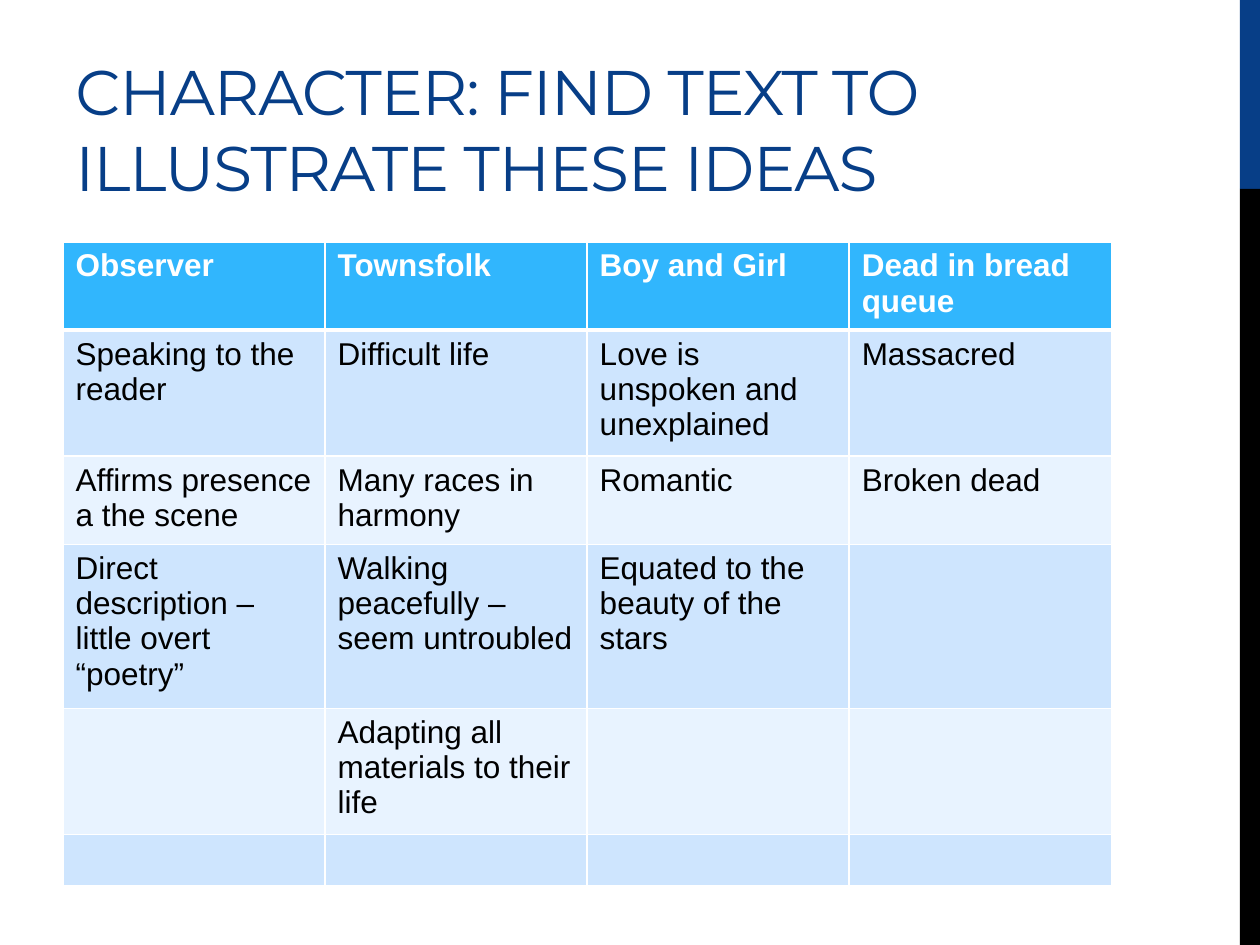
from lxml import etree
from pptx import Presentation
from pptx.dml.color import RGBColor
from pptx.enum import shapes, text
from pptx.oxml import ns
from pptx.util import Inches, Pt

TITLE = "CHARACTER: FIND TEXT TO ILLUSTRATE THESE IDEAS"
ROWS = [
    ("Observer", "Townsfolk", "Boy and Girl", "Dead in bread queue"),
    ("Speaking to the reader", "Difficult life",
     "Love is unspoken and unexplained", "Massacred"),
    ("Affirms presence a the scene", "Many races in harmony",
     "Romantic", "Broken dead"),
    ("Direct description – little overt “poetry”",
     "Walking peacefully – seem untroubled",
     "Equated to the beauty of the stars", ""),
    ("", "Adapting all materials to their life", "", ""),
    ("", "", "", ""),
]
ROW_HEIGHTS = [0.65, 0.94, 0.66, 1.22, 0.94, 0.41]
COLUMN_WIDTH = 2.08
COLORS = {
    "navy": "073E87", "black": "000000", "white": "FFFFFF",
    "header": "31B6FD", "odd": "CEE5FE", "even": "E8F3FF",
}
# Side bars: top, height, colour
BARS = [(0, 1.5, "navy"), (1.5, 6, "black")]


def rgb(name):
    return RGBColor.from_string(COLORS[name])


def style_span(span, font_name, size, color, bold=False):
    span.font.name = font_name
    span.font.size = Pt(size)
    span.font.bold = bold
    span.font.color.rgb = rgb(color)


def set_borders(cell, widths):
    properties = cell._tc.get_or_add_tcPr()
    for position, (side, width) in enumerate(widths.items()):
        line = etree.Element(ns.qn(f"a:ln{side}"), w=str(Pt(width)))
        fill = etree.SubElement(line, ns.qn("a:solidFill"))
        etree.SubElement(fill, ns.qn("a:srgbClr"), val=COLORS["white"])
        properties.insert(position, line)


def add_bars(page):
    for top, height, color in BARS:
        bar = page.shapes.add_shape(
            shapes.MSO_SHAPE.RECTANGLE,
            Inches(9.84), Inches(top), Inches(0.16), Inches(height))
        bar.shadow.inherit = False
        bar.fill.solid()
        bar.fill.fore_color.rgb = rgb(color)
        bar.line.fill.background()


def add_title(page):
    box = page.shapes.add_textbox(
        Inches(0.5), Inches(0.17), Inches(8.92), Inches(1.5))
    frame = box.text_frame
    frame.word_wrap = True
    frame.vertical_anchor = text.MSO_ANCHOR.BOTTOM
    frame.text = TITLE
    span = frame.paragraphs[0].runs[0]
    style_span(span, "Montserrat", 36, "navy")
    span.font._element.set("spc", "-60")


def add_character_table(page):
    columns = len(ROWS[0])
    table = page.shapes.add_table(
        len(ROWS), columns, Inches(0.5), Inches(1.92),
        Inches(COLUMN_WIDTH * columns), Inches(sum(ROW_HEIGHTS))).table
    for column in table.columns:
        column.width = Inches(COLUMN_WIDTH)
    for index, (words, height) in enumerate(zip(ROWS, ROW_HEIGHTS)):
        table.rows[index].height = Inches(height)
        header = index == 0
        shade = "header" if header else "odd" if index % 2 else "even"
        widths = {"L": 1, "R": 1, "T": 3 if index == 1 else 1,
                  "B": 3 if header else 1}
        for cell, wording in zip(table.rows[index].cells, words):
            cell.fill.solid()
            cell.fill.fore_color.rgb = rgb(shade)
            set_borders(cell, widths)
            if wording:
                cell.text_frame.text = wording
                style_span(cell.text_frame.paragraphs[0].runs[0], "Arial", 18,
                           "white" if header else "black", header)


def main():
    deck = Presentation()
    deck.slide_width, deck.slide_height = Inches(10), Inches(7.5)
    page = deck.slides.add_slide(deck.slide_layouts[6])
    add_bars(page)
    add_title(page)
    add_character_table(page)
    deck.save("out.pptx")


if __name__ == "__main__":
    main()
